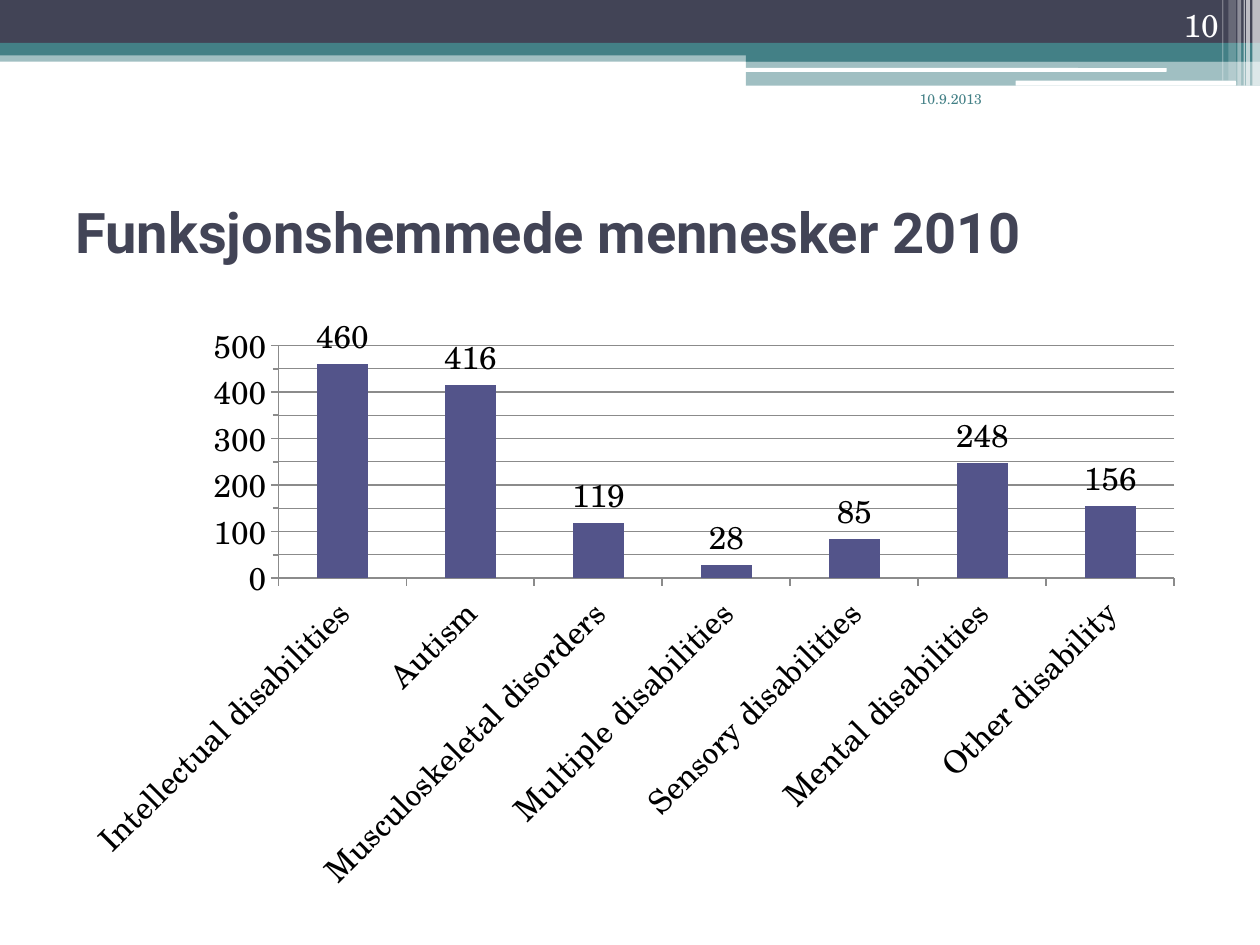
import pptx
import pptx.util
import pptx.chart.data
import pptx.dml.color
import pptx.enum.chart
import pptx.enum.shapes
import pptx.enum.text
import pptx.oxml
import pptx.oxml.ns
from pptx.util import Inches

SERIF = "TeX Gyre Schola"
GRID = "8B8B8B"


def color(value):
    return pptx.dml.color.RGBColor.from_string(value)


def add_text(box, text, size, font, fill, anchor, alignment, bold=False):
    left, top, width, height = [Inches(value) for value in box]
    frame = slide.shapes.add_textbox(left, top, width, height).text_frame
    frame.word_wrap = True
    frame.vertical_anchor = anchor
    paragraph = frame.paragraphs[0]
    paragraph.alignment = alignment
    run = paragraph.add_run()
    run.text = text
    run.font.size = pptx.util.Pt(size)
    run.font.name = font
    run.font.bold = bold
    run.font.color.rgb = color(fill)


presentation = pptx.Presentation()
presentation.slide_width = Inches(10)
presentation.slide_height = Inches(7.5)
slide = presentation.slides.add_slide(presentation.slide_layouts[6])

RECTANGLE = pptx.enum.shapes.MSO_SHAPE.RECTANGLE
ROUNDED = pptx.enum.shapes.MSO_SHAPE.ROUNDED_RECTANGLE
header_bars = [
    (RECTANGLE, 0, 0.4, 10, 0.09, "438086", 50),
    (RECTANGLE, 0, 0, 10, 0.34, "424456", 100),
    (RECTANGLE, 0, 0.34, 10, 0.1, "438086", 100),
    (RECTANGLE, 5.92, 0.39, 4.08, 0.1, "438086", 100),
    (RECTANGLE, 5.92, 0.48, 4.08, 0.2, "438086", 50),
    (ROUNDED, 5.91, 0.54, 3.35, 0.03, "FFFFFF", 100),
    (ROUNDED, 8.06, 0.64, 1.75, 0.04, "FFFFFF", 100),
    (RECTANGLE, 9.94, 0, 0.06, 0.68, "FFFFFF", 65),
    (RECTANGLE, 9.89, 0, 0.03, 0.68, "FFFFFF", 65),
    (RECTANGLE, 9.87, 0, 0.01, 0.68, "FFFFFF", 60),
    (RECTANGLE, 9.82, 0, 0.03, 0.68, "FFFFFF", 40),
    (RECTANGLE, 9.75, 0, 0.06, 0.64, "FFFFFF", 20),
    (RECTANGLE, 9.7, 0, 0.01, 0.64, "FFFFFF", 30),
]
for preset, left, top, width, height, fill, opacity in header_bars:
    shape = slide.shapes.add_shape(
        preset, Inches(left), Inches(top), Inches(width), Inches(height))
    shape.shadow.inherit = False
    shape.line.fill.background()
    shape.fill.solid()
    shape.fill.fore_color.rgb = color(fill)
    if opacity < 100:
        rgb = shape.fill._xPr.find(".//" + pptx.oxml.ns.qn("a:srgbClr"))
        alpha = pptx.oxml.parse_xml(
            f'<a:alpha {pptx.oxml.ns.nsdecls("a")} val="{opacity * 1000}"/>')
        rgb.append(alpha)

ANCHOR = pptx.enum.text.MSO_ANCHOR
ALIGN = pptx.enum.text.PP_ALIGN
add_text((0.5, 1.25, 9, 1.17), "Funksjonshemmede mennesker 2010", 32, "Roboto",
         "424456", ANCHOR.MIDDLE, ALIGN.LEFT, True)

data = pptx.chart.data.CategoryChartData()
data.categories = [
    "Intellectual disabilities", "Autism", "Musculoskeletal disorders",
    "Multiple disabilities", "Sensory disabilities", "Mental disabilities",
    "Other disability"]
data.add_series("Series 1", (460, 416, 119, 28, 85, 248, 156))
chart = slide.shapes.add_chart(
    pptx.enum.chart.XL_CHART_TYPE.COLUMN_CLUSTERED,
    Inches(0.5), Inches(2.46), Inches(9), Inches(4.73), data).chart
chart.has_legend = False
chart.has_title = False
chart.font.size = pptx.util.Pt(18)
chart.font.name = SERIF
chart.font.color.rgb = color("000000")

plot = chart.plots[0]
plot.gap_width = 150
plot.vary_by_categories = False
plot.has_data_labels = True
plot.data_labels.show_value = True
plot.data_labels.position = pptx.enum.chart.XL_LABEL_POSITION.OUTSIDE_END
bars = plot.series[0].format.fill
bars.solid()
bars.fore_color.rgb = color("53548A")

category_axis, value_axis = chart.category_axis, chart.value_axis
value_axis.minimum_scale = 0
value_axis.maximum_scale = 500
value_axis.major_unit = 100
value_axis.minor_unit = 50
value_axis.has_major_gridlines = True
value_axis.has_minor_gridlines = True
OUTSIDE = pptx.enum.chart.XL_TICK_MARK.OUTSIDE
category_axis.major_tick_mark = OUTSIDE
value_axis.major_tick_mark = OUTSIDE
value_axis.minor_tick_mark = OUTSIDE
category_axis.tick_labels.font.size = pptx.util.Pt(18)
category_axis._element.txPr.bodyPr.set("rot", "-2700000")

minor_gridlines = pptx.chart.axis.MajorGridlines(value_axis._element)
minor_properties = pptx.oxml.parse_xml(
    f'<c:spPr {pptx.oxml.ns.nsdecls("c", "a")}><a:ln w="6350"><a:solidFill>'
    f'<a:srgbClr val="{GRID}"/></a:solidFill></a:ln></c:spPr>')
value_axis._element.find(pptx.oxml.ns.qn("c:minorGridlines")).append(minor_properties)
for line in (category_axis.format.line, value_axis.format.line,
             value_axis.major_gridlines.format.line):
    line.color.rgb = color(GRID)
    line.width = pptx.util.Pt(1)

layout = pptx.oxml.parse_xml(
    f'<c:layout {pptx.oxml.ns.nsdecls("c")}><c:manualLayout>'
    '<c:layoutTarget val="inner"/><c:xMode val="edge"/><c:yMode val="edge"/>'
    '<c:x val="0.19"/><c:y val="0.06"/><c:w val="0.79"/><c:h val="0.39"/>'
    '</c:manualLayout></c:layout>')
plot_area = chart._chartSpace.chart.plotArea
for old_layout in plot_area.findall(pptx.oxml.ns.qn("c:layout")):
    plot_area.remove(old_layout)
plot_area.insert(0, layout)

add_text((7.2, 0.67, 1.05, 0.5), "10.9.2013", 8, SERIF, "438086",
         ANCHOR.TOP, ALIGN.LEFT)
add_text((8.94, 0, 0.83, 0.4), "10", 18, SERIF, "FFFFFF",
         ANCHOR.BOTTOM, ALIGN.RIGHT)

presentation.save("out.pptx")
